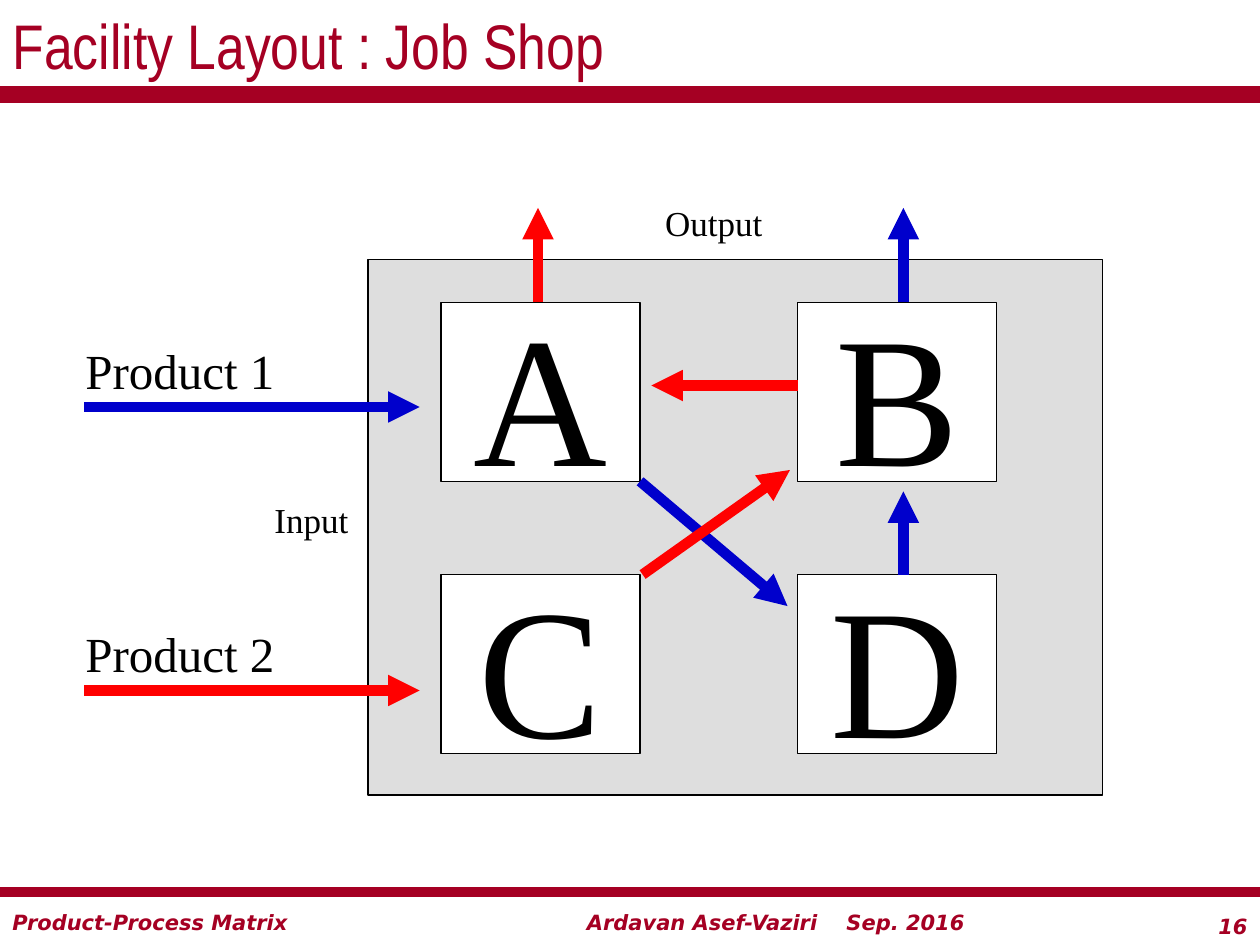
from itertools import product

from lxml.etree import SubElement
from pptx import Presentation
from pptx.dml.color import RGBColor
from pptx.enum.shapes import MSO_CONNECTOR, MSO_SHAPE
from pptx.enum.text import MSO_ANCHOR, MSO_AUTO_SIZE, PP_ALIGN
from pptx.oxml.ns import qn
from pptx.util import Inches, Pt

COLORS = {"crimson": "A50023", "black": "000000", "white": "FFFFFF",
          "floor": "BFBFBF", "blue": "0000CC", "red": "FF0000"}
SLIDE_WIDTH, SLIDE_HEIGHT = 10, 7.5

# Grid of the four departments
COLUMNS = (3.5, 6.33)
ROWS = (2.4, 4.56)
CELL_WIDTH, CELL_HEIGHT = 1.58, 1.42
OUTPUT_TOP = 1.65

TITLE_FONT = {"name": "Arial Narrow", "size": Pt(36), "bold": False}
FOOTER_FONT = {"name": "DejaVu Sans", "size": Pt(12), "bold": True, "italic": True}
LABEL_FONT = {"name": "Times New Roman", "size": Pt(20)}
PRODUCT_FONT = {**LABEL_FONT, "size": Pt(28)}
LETTER_FONT = {**LABEL_FONT, "size": Pt(106)}


def rgb(name):
    return RGBColor.from_string(COLORS[name])


def write(shape, text, font, color="black", align=PP_ALIGN.LEFT, **frame_format):
    """Put one formatted paragraph into a shape's text frame."""
    frame = shape.text_frame
    for name, value in frame_format.items():
        setattr(frame, name, value)
    paragraph = frame.paragraphs[0]
    paragraph.alignment = align
    run = paragraph.add_run()
    run.text = text
    for name, value in font.items():
        setattr(run.font, name, value)
    run.font.color.rgb = rgb(color)


def add_title(slide, text):
    title = slide.shapes.title
    title.left, title.top = 0, 0
    title.width, title.height = Inches(SLIDE_WIDTH), Inches(0.71)
    write(title, text, TITLE_FONT, "crimson", auto_size=MSO_AUTO_SIZE.NONE,
          vertical_anchor=MSO_ANCHOR.MIDDLE)


def add_label(slide, text, box, font, **text_format):
    label = slide.shapes.add_textbox(*map(Inches, box))
    write(label, text, font, word_wrap=True, **text_format)


def add_rectangle(slide, box, color):
    rectangle = slide.shapes.add_shape(MSO_SHAPE.RECTANGLE, *map(Inches, box))
    rectangle.shadow.inherit = False
    rectangle.fill.solid()
    rectangle.fill.fore_color.rgb = rgb(color)
    rectangle.line.color.rgb = rgb("black")
    rectangle.line.width = Pt(0.75)
    return rectangle


def add_floor(slide):
    """Add the half-transparent shop floor behind the departments."""
    floor = add_rectangle(slide, (2.92, 2.06, 5.83, 4.25), "floor")
    color = floor.fill._xPr.find(qn("a:solidFill"))[0]
    SubElement(color, qn("a:alpha"), val="50000")


def add_department(slide, letter, left, top):
    department = add_rectangle(slide, (left, top, CELL_WIDTH, CELL_HEIGHT), "white")
    write(department, letter, LETTER_FONT, align=PP_ALIGN.CENTER, word_wrap=False,
          vertical_anchor=MSO_ANCHOR.MIDDLE)


def add_line(slide, start, end, color, width=6, arrow=False):
    line = slide.shapes.add_connector(
        MSO_CONNECTOR.STRAIGHT, *map(Inches, (*start, *end)))
    line.line.color.rgb = rgb(color)
    line.line.width = Pt(width)
    if arrow:
        SubElement(line.line._get_or_add_ln(), qn("a:tailEnd"), type="triangle")
    SubElement(line._element.spPr, qn("a:effectLst"))


def add_product(slide, text, top, color):
    """Add a product name over its input arrow."""
    add_label(slide, text, (0.58, top, 2.58, 0.57), PRODUCT_FONT)
    add_line(slide, (0.67, top + 0.58), (3.33, top + 0.58), color, arrow=True)


def add_route(slide, color, steps):
    for start, end in steps:
        add_line(slide, start, end, color, arrow=True)


def add_frame(slide):
    """Add the two bars and the footer."""
    for y, width in ((0.75, 10), (7.08, 6)):
        add_line(slide, (0, y), (SLIDE_WIDTH, y), "crimson", width)
    footers = (
        ("Product-Process Matrix", (0, 7.17, 4.67, 0.3), PP_ALIGN.LEFT),
        ("Ardavan Asef-Vaziri    Sep. 2016", (4.56, 7.17, 3.35, 0.3), PP_ALIGN.LEFT),
        ("16", (9.25, 7.2, 0.75, 0.3), PP_ALIGN.RIGHT),
    )
    for text, box, align in footers:
        add_label(slide, text, box, FOOTER_FONT, color="crimson", align=align)


def main():
    presentation = Presentation()
    presentation.slide_width = Inches(SLIDE_WIDTH)
    presentation.slide_height = Inches(SLIDE_HEIGHT)
    slide = presentation.slides.add_slide(presentation.slide_layouts[5])

    add_frame(slide)
    add_title(slide, "Facility Layout : Job Shop")
    add_floor(slide)
    for letter, (top, left) in zip("ABCD", product(ROWS, COLUMNS)):
        add_department(slide, letter, left, top)

    left_edge, right_edge = COLUMNS[0] + CELL_WIDTH, COLUMNS[1]
    top_row, bottom_row = ROWS
    add_product(slide, "Product 1", 2.65, "blue")
    add_route(slide, "blue", (
        ((left_edge, top_row + CELL_HEIGHT), (6.25, 4.81)),
        ((7.17, bottom_row), (7.17, 3.9)),
        ((7.17, top_row), (7.17, OUTPUT_TOP)),
    ))
    add_label(slide, "Output", (5.18, 1.55, 1, 0.43), LABEL_FONT)
    add_label(slide, "Input", (2.08, 3.91, 1.42, 0.43), LABEL_FONT)
    add_product(slide, "Product 2", 4.9, "red")
    add_route(slide, "red", (
        ((5.1, bottom_row), (6.27, 3.73)),
        ((right_edge, 3.06), (5.17, 3.06)),
        ((4.27, top_row), (4.27, OUTPUT_TOP)),
    ))
    presentation.save("out.pptx")


if __name__ == "__main__":
    main()
